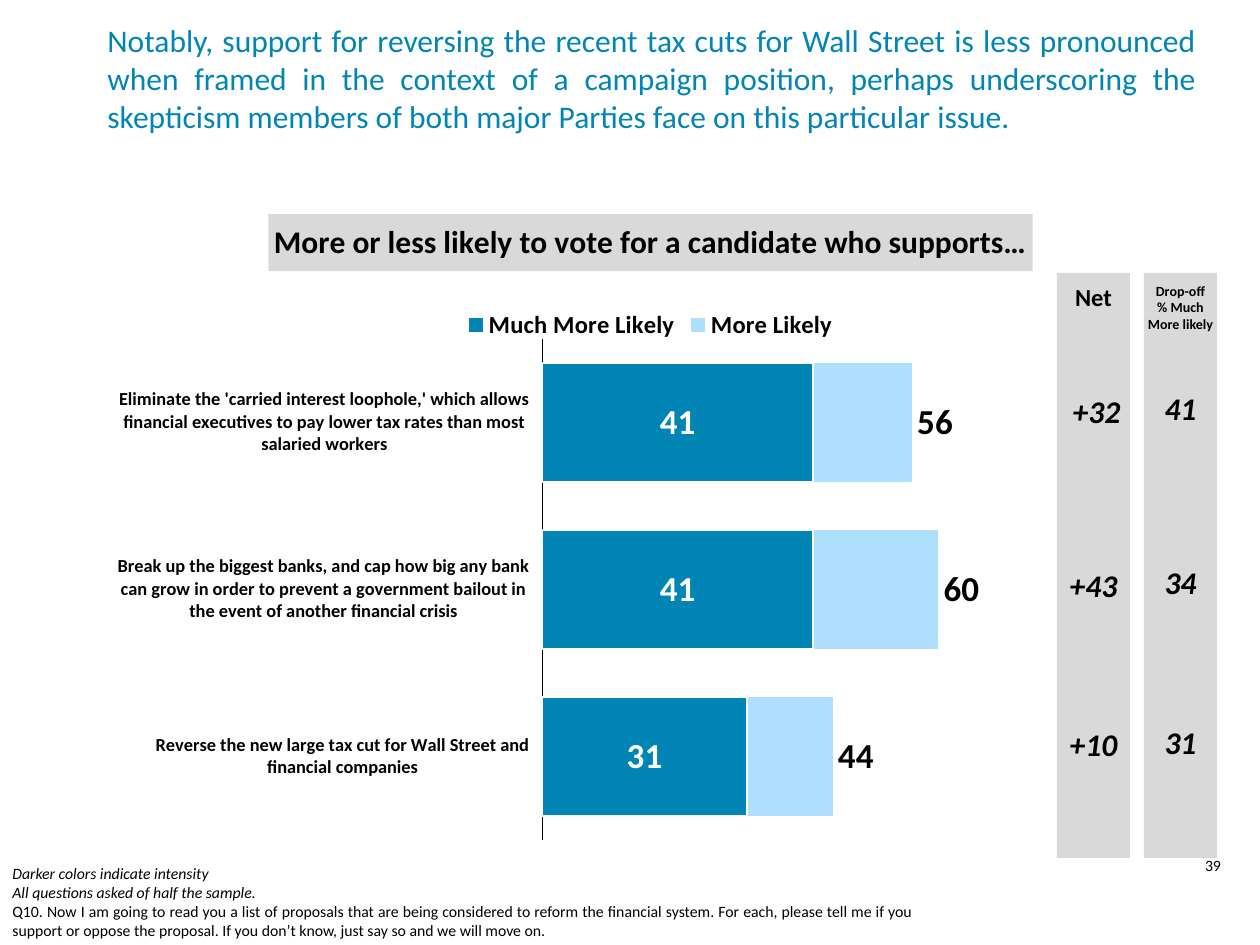
from copy import deepcopy

from lxml import etree
from pptx import Presentation
from pptx.chart.data import CategoryChartData
from pptx.dml.color import RGBColor
from pptx.enum.chart import (XL_CHART_TYPE, XL_LABEL_POSITION, XL_LEGEND_POSITION,
                             XL_TICK_LABEL_POSITION, XL_TICK_MARK)
from pptx.enum.shapes import MSO_SHAPE
from pptx.enum.text import MSO_ANCHOR, PP_ALIGN
from pptx.oxml.ns import qn
from pptx.util import Emu, Pt

SCALE = 914400 / 126
COLORS = {"dark": "0085B4", "light": "AFDFFF", "panel": "D9D9D9",
          "black": "000000", "white": "FFFFFF"}
HEADLINE = ("Notably, support for reversing the recent tax cuts for Wall Street is less "
            "pronounced when framed in the context of a campaign position, perhaps underscoring "
            "the skepticism members of both major Parties face on this particular issue.")
NOTES = [
    ("Darker colors indicate intensity", True),
    ("All questions asked of half the sample.", True),
    ("Q10. Now I am going to read you a list of proposals that are being considered to reform "
     "the financial system. For each, please tell me if you support or oppose the proposal. "
     "If you don’t know, just say so and we will move on.", False),
]
PROPOSALS = [
    "Eliminate the 'carried interest loophole,' which allows financial executives to pay lower "
    "tax rates than most salaried workers",
    "Break up the biggest banks, and cap how big any bank can grow in order to prevent a "
    "government bailout in the event of another financial crisis",
    "Reverse the new large tax cut for Wall Street and financial companies",
]
# name, values, fill, outline width, label colour, label position
SERIES = [
    ("More Likely", (56, 60, 44), "light", 0.25, "black", XL_LABEL_POSITION.OUTSIDE_END),
    ("Much More Likely", (41, 41, 31), "dark", 1.05, "white", XL_LABEL_POSITION.CENTER),
]
# left, heading lines, heading size, (figure, left shift, top)
PANELS = [
    (1057, ["Net"], 14, [("+32", 3, 392), ("+43", 0, 566), ("+10", 0, 725)]),
    (1144, ["Drop-off", "% Much More likely"], 8,
     [("41", 0, 389), ("34", 0, 563), ("31", 0, 723)]),
]
PANEL_TOP, PANEL_WIDTH, PANEL_HEIGHT = 273, 73, 585


def px(*lengths):
    return [Emu(round(length * SCALE)) for length in lengths]


def color(name):
    return RGBColor.from_string(COLORS[name])


def style_font(font, size, tint="black", name="Calibri", **flags):
    for key, value in {"size": Pt(size), "name": name, **flags}.items():
        setattr(font, key, value)
    font.color.rgb = color(tint)


def add_text(shapes, frame, lines, size, align=PP_ALIGN.CENTER, tint="black",
             anchor=MSO_ANCHOR.TOP, inset=True, bold=False):
    """Add a wrapped text box; lines are (text, italic) pairs."""
    box = shapes.add_textbox(*px(*frame))
    text = box.text_frame
    settings = {"word_wrap": True, "vertical_anchor": anchor}
    if not inset:
        settings.update(dict.fromkeys(
            ("margin_left", "margin_top", "margin_right", "margin_bottom"), 0))
    for key, value in settings.items():
        setattr(text, key, value)
    for index, (line, italic) in enumerate(lines):
        para = text.add_paragraph() if index else text.paragraphs[0]
        para.alignment = align
        span = para.add_run()
        span.text = line
        style_font(span.font, size, tint, bold=bold, italic=italic)


def add_panel(page, left, heading, heading_size, figures):
    shapes = page.shapes.add_group_shape().shapes
    panel = shapes.add_shape(MSO_SHAPE.RECTANGLE,
                             *px(left, PANEL_TOP, PANEL_WIDTH, PANEL_HEIGHT))
    panel.shadow.inherit = False
    panel.fill.solid()
    panel.fill.fore_color.rgb = color("panel")
    panel.line.fill.background()
    add_text(shapes, (left, 282, PANEL_WIDTH, 46), [(line, False) for line in heading],
             heading_size, inset=False, bold=True)
    for figure, shift, top in figures:
        add_text(shapes, (left + shift, top, PANEL_WIDTH, 35), [(figure, True)], 18,
                 inset=False, bold=True)


def place(element, **fractions):
    """Give a chart part a manual layout in fractions of the chart."""
    old = element.find(qn("c:layout"))
    if old is not None:
        element.remove(old)
    layout = etree.Element(qn("c:layout"))
    manual = etree.SubElement(layout, qn("c:manualLayout"))
    if "w" in fractions:
        etree.SubElement(manual, qn("c:layoutTarget")).set("val", "inner")
    for key in "xy":
        etree.SubElement(manual, qn(f"c:{key}Mode")).set("val", "edge")
    for key, value in fractions.items():
        etree.SubElement(manual, qn(f"c:{key}")).set("val", str(value))
    follower = element.find(qn("c:overlay"))
    if follower is None:
        follower = element[0]
    follower.addprevious(layout)


def move_to_second_axes(area):
    """Put the last series in its own bar group on hidden secondary axes."""
    first = area.find(qn("c:barChart"))
    second = deepcopy(first)
    first.remove(first.findall(qn("c:ser"))[-1])
    second.remove(second.find(qn("c:ser")))
    first.addnext(second)
    axes = [area.find(qn("c:catAx")), area.find(qn("c:valAx"))]
    ids = {axis.find(qn("c:axId")).get("val"): str(5001 + index)
           for index, axis in enumerate(axes)}
    for link in second.findall(qn("c:axId")):
        link.set("val", ids[link.get("val")])
    last = axes[-1]
    for axis in axes:
        twin = deepcopy(axis)
        for tag in ("c:axId", "c:crossAx"):
            link = twin.find(qn(tag))
            link.set("val", ids[link.get("val")])
        twin.find(qn("c:delete")).set("val", "1")
        if axis is axes[1]:
            twin.find(qn("c:crosses")).set("val", "max")
        last.addnext(twin)
        last = twin


def style_series(series, fill, width, label_color, position):
    series.format.fill.solid()
    series.format.fill.fore_color.rgb = color(fill)
    series.format.line.color.rgb = color("white")
    series.format.line.width = Pt(width)
    labels = series.data_labels
    for key, value in {"show_value": True, "number_format": "0",
                       "number_format_is_linked": False, "position": position}.items():
        setattr(labels, key, value)
    style_font(labels.font, 20, label_color, bold=True)


def style_axes(chart):
    formats = {
        chart.category_axis: {"reverse_order": True, "major_tick_mark": XL_TICK_MARK.NONE,
                              "tick_label_position": XL_TICK_LABEL_POSITION.LOW},
        chart.value_axis: {"visible": False, "minimum_scale": 0, "maximum_scale": 100,
                           "has_major_gridlines": False},
    }
    for axis, settings in formats.items():
        for key, value in settings.items():
            setattr(axis, key, value)
    style_font(chart.category_axis.tick_labels.font, 10.5, bold=True)
    line = chart.category_axis.format.line
    line.color.rgb = color("black")
    line.width = Pt(0.25)


def add_support_chart(page):
    data = CategoryChartData(number_format="0")
    data.categories = PROPOSALS
    for name, values, *_ in SERIES:
        data.add_series(name, values)
    chart = page.shapes.add_chart(XL_CHART_TYPE.BAR_CLUSTERED,
                                  *px(111, 214, 1092, 650), data).chart
    style_font(chart.font, 11, name="Arial")
    plot = chart.plots[0]
    for key, value in {"gap_width": 40, "overlap": 100, "vary_by_categories": False}.items():
        setattr(plot, key, value)
    for series, (_, _, *formats) in zip(plot.series, SERIES):
        style_series(series, *formats)
    style_axes(chart)

    chart.has_title = True
    title = chart.chart_title
    title.text_frame.text = "More or less likely to vote for a candidate who supports…"
    style_font(title.text_frame.paragraphs[0].runs[0].font, 18, bold=True)
    title.format.fill.solid()
    title.format.fill.fore_color.rgb = color("panel")
    chart.has_legend = True
    chart.legend.position = XL_LEGEND_POSITION.TOP
    chart.legend.include_in_layout = False
    style_font(chart.legend.font, 14, bold=True)

    area = chart._chartSpace.find(".//" + qn("c:plotArea"))
    move_to_second_axes(area)
    place(area, x=0.395, y=0.192, w=0.605, h=0.771)
    place(title._element, x=0.144, y=0)
    place(chart.legend._element, x=0.32, y=0.14)


def main():
    deck = Presentation()
    deck.slide_width, deck.slide_height = px(1260, 945)
    page = deck.slides.add_slide(deck.slide_layouts[6])
    add_text(page.shapes, (1166, 850, 94, 42), [("39", False)], 9)
    add_support_chart(page)
    add_text(page.shapes, (0, 858, 924, 89), NOTES, 9, PP_ALIGN.JUSTIFY)
    add_text(page.shapes, (95, 5, 1114, 146), [(HEADLINE, False)], 18, PP_ALIGN.JUSTIFY,
             "dark", MSO_ANCHOR.MIDDLE)
    for panel in PANELS:
        add_panel(page, *panel)
    deck.save("out.pptx")


if __name__ == "__main__":
    main()
